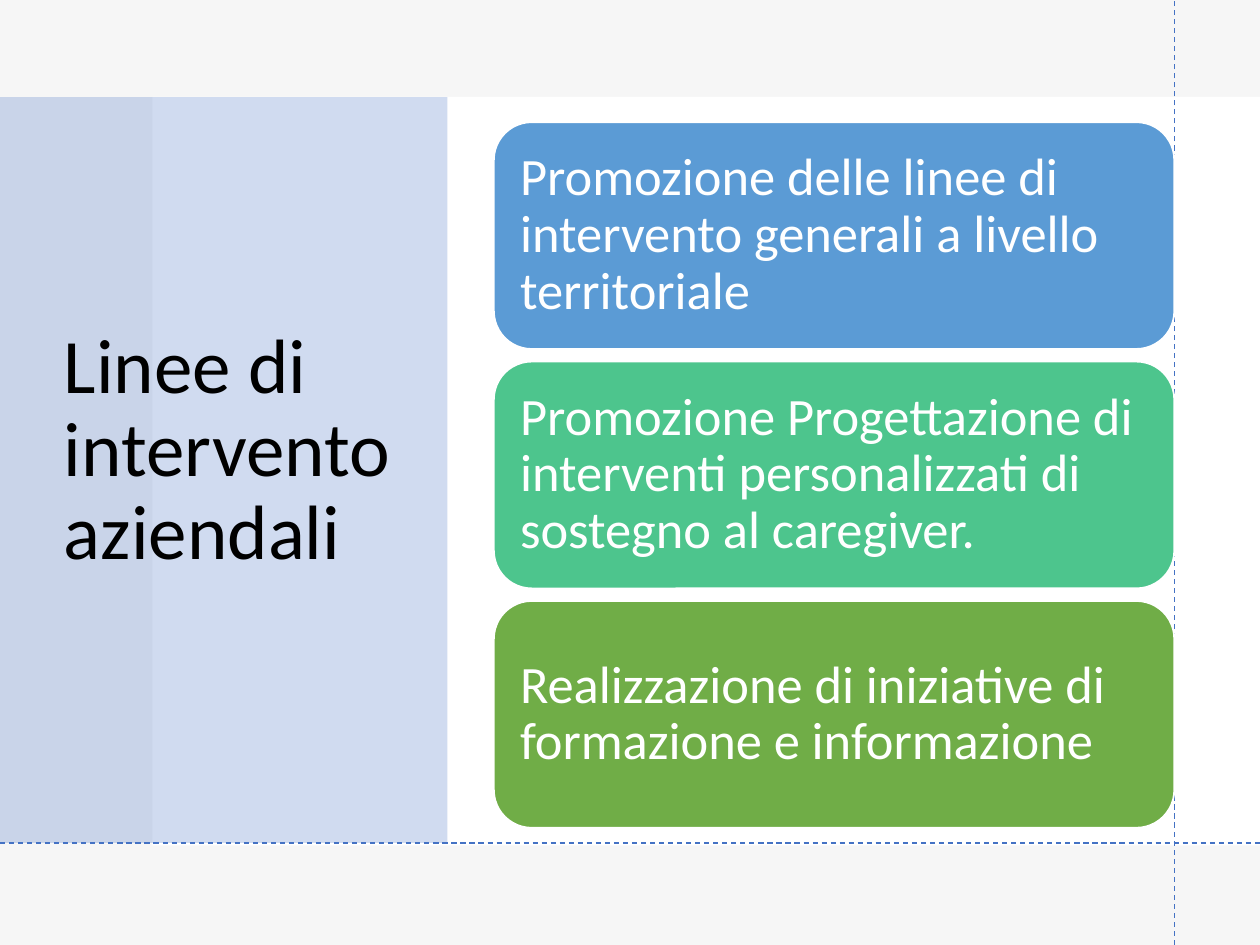
from lxml.etree import SubElement
from pptx import Presentation
from pptx.dml.color import RGBColor
from pptx.enum.dml import MSO_LINE
from pptx.enum.shapes import MSO_CONNECTOR, MSO_SHAPE
from pptx.enum.text import MSO_ANCHOR, PP_ALIGN
from pptx.oxml.ns import qn
from pptx.util import Inches, Pt

WHITE = RGBColor(0xFF, 0xFF, 0xFF)
BLACK = RGBColor(0, 0, 0)
GRAY = RGBColor(0xE7, 0xE6, 0xE6)
ACCENT = RGBColor(0x44, 0x72, 0xC4)
BLUE = RGBColor(0x5B, 0x9B, 0xD5)
TEAL = RGBColor(0x4D, 0xC5, 0x8D)
GREEN = RGBColor(0x70, 0xAD, 0x47)

SLIDE_WIDTH, SLIDE_HEIGHT = 10, 7.5
TITLE = "Linee di intervento aziendali"
CARDS = [
    ("Promozione delle linee di intervento generali a livello territoriale", BLUE),
    ("Promozione Progettazione di interventi personalizzati di sostegno al caregiver.", TEAL),
    ("Realizzazione di iniziative di formazione e informazione", GREEN),
]
CARD_LEFT, CARD_TOP, CARD_WIDTH, CARD_HEIGHT, CARD_GAP = 3.92, 0.97, 5.4, 1.8, 0.1

# left, top, width, height, colour, opacity in percent
PANELS = [
    (0, 0, SLIDE_WIDTH, SLIDE_HEIGHT, WHITE, 100),
    (0, 0, SLIDE_WIDTH, SLIDE_HEIGHT, GRAY, 35),
    (1.21, 0.77, 8.79, 5.94, WHITE, 100),
    (0, 0.77, 3.55, 5.92, ACCENT, 25),
]
# start x, start y, end x, end y
GUIDES = [
    (9.32, SLIDE_HEIGHT, 9.32, 0),
    (0, 6.69, SLIDE_WIDTH, 6.69),
]


def add_box(slide, preset, left, top, width, height, color, opacity=100):
    shape = slide.shapes.add_shape(
        preset, Inches(left), Inches(top), Inches(width), Inches(height))
    shape.shadow.inherit = False
    shape.fill.solid()
    shape.fill.fore_color.rgb = color
    shape.line.fill.background()
    if opacity < 100:
        fill_color = shape._element.spPr.find(qn("a:solidFill"))[0]
        SubElement(fill_color, qn("a:alpha")).set("val", str(opacity * 1000))
    return shape


def write_text(shape, text, size, color, inset=0.1):
    frame = shape.text_frame
    frame.word_wrap = True
    frame.vertical_anchor = MSO_ANCHOR.MIDDLE
    frame.margin_left = frame.margin_right = Inches(inset)
    paragraph = frame.paragraphs[0]
    paragraph.alignment = PP_ALIGN.LEFT
    paragraph.line_spacing = 0.9
    run = paragraph.add_run()
    run.text = text
    run.font.name = "Calibri"
    run.font.size = Pt(size)
    run.font.color.rgb = color


def add_guide(slide, *ends):
    line = slide.shapes.add_connector(
        MSO_CONNECTOR.STRAIGHT, *[Inches(value) for value in ends])
    line.line.color.rgb = ACCENT
    line.line.width = Pt(0.75)
    line.line.dash_style = MSO_LINE.DASH
    SubElement(line._element.spPr, qn("a:effectLst"))


def main():
    presentation = Presentation()
    presentation.slide_width = Inches(SLIDE_WIDTH)
    presentation.slide_height = Inches(SLIDE_HEIGHT)
    slide = presentation.slides.add_slide(presentation.slide_layouts[6])

    for panel in PANELS:
        add_box(slide, MSO_SHAPE.RECTANGLE, *panel)

    title = slide.shapes.add_textbox(Inches(0.41), Inches(0.74), Inches(2.96), Inches(5.69))
    write_text(title, TITLE, size=44, color=BLACK)

    for guide in GUIDES:
        add_guide(slide, *guide)

    for index, (text, color) in enumerate(CARDS):
        top = CARD_TOP + index * (CARD_HEIGHT + CARD_GAP)
        card = add_box(slide, MSO_SHAPE.ROUNDED_RECTANGLE,
                       CARD_LEFT, top, CARD_WIDTH, CARD_HEIGHT, color)
        card.line.color.rgb = WHITE
        card.line.width = Pt(1)
        write_text(card, text, size=30, color=WHITE, inset=0.12)

    presentation.save("out.pptx")


if __name__ == "__main__":
    main()
